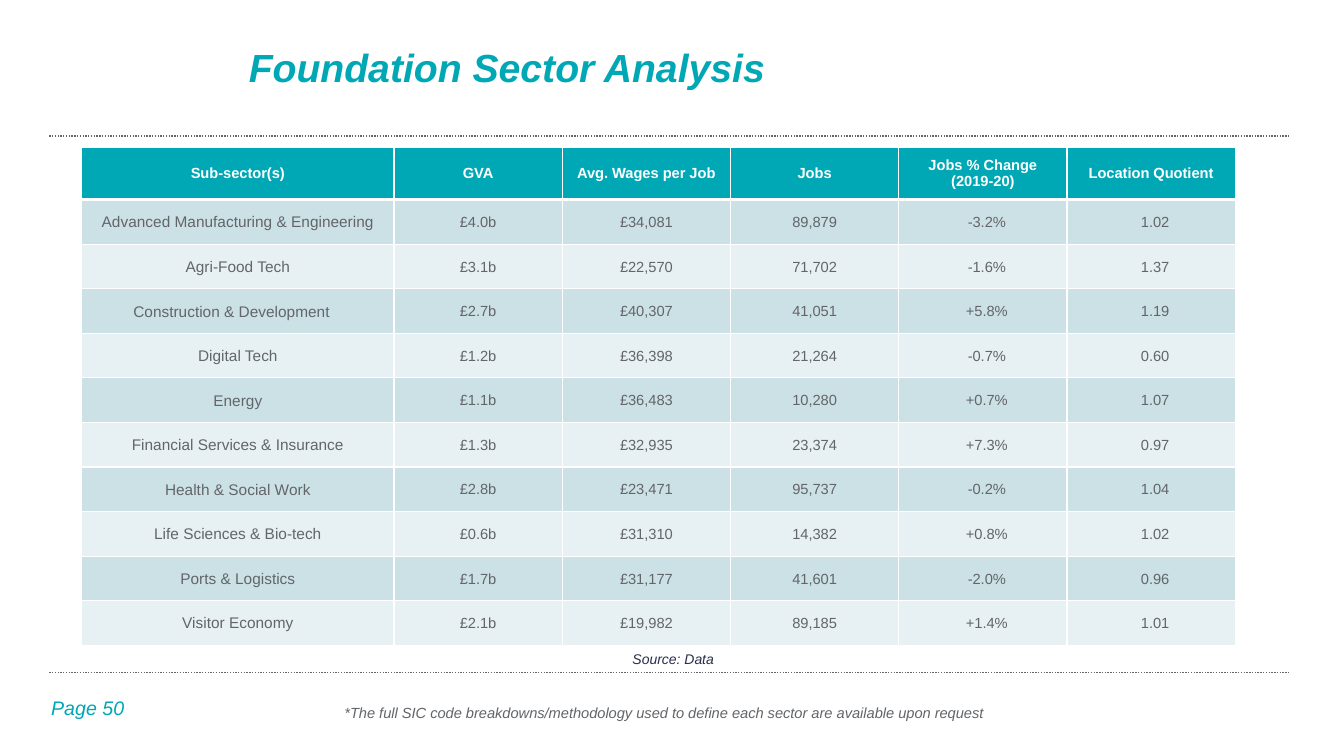
from dataclasses import dataclass

from lxml.etree import SubElement
from pptx import Presentation
from pptx.dml.color import RGBColor
from pptx.enum.dml import MSO_LINE
from pptx.enum.shapes import MSO_CONNECTOR
from pptx.enum.text import MSO_ANCHOR, PP_ALIGN
from pptx.oxml.ns import qn
from pptx.util import Cm, Pt

TITLE = "Foundation Sector Analysis"
SOURCE = "Source: Data"
NOTE = ("*The full SIC code breakdowns/methodology used to define each sector "
        "are available upon request")
PAGE = "Page 50"
HEAD = ["Sub-sector(s)", "GVA", "Avg. Wages per Job", "Jobs",
        "Jobs % Change\n(2019-20)", "Location Quotient"]
ROWS = [
    ("Advanced Manufacturing & Engineering", "£4.0b", "£34,081", "89,879", "-3.2%", "1.02"),
    ("Agri-Food Tech", "£3.1b", "£22,570", "71,702", "-1.6%", "1.37"),
    ("Construction & Development", "£2.7b", "£40,307", "41,051", "+5.8%", "1.19"),
    ("Digital Tech", "£1.2b", "£36,398", "21,264", "-0.7%", "0.60"),
    ("Energy", "£1.1b", "£36,483", "10,280", "+0.7%", "1.07"),
    ("Financial Services & Insurance", "£1.3b", "£32,935", "23,374", "+7.3%", "0.97"),
    ("Health & Social Work", "£2.8b", "£23,471", "95,737", "-0.2%", "1.04"),
    ("Life Sciences & Bio-tech", "£0.6b", "£31,310", "14,382", "+0.8%", "1.02"),
    ("Ports & Logistics", "£1.7b", "£31,177", "41,601", "-2.0%", "0.96"),
    ("Visitor Economy", "£2.1b", "£19,982", "89,185", "+1.4%", "1.01"),
]
INDENTED = "Construction & Development"  # the one left-aligned name


@dataclass(frozen=True)
class Theme:
    font: str = "Arial"
    teal: str = "00A7B5"
    grey: str = "626569"
    navy: str = "2B2E4B"
    white: str = "FFFFFF"
    bands: tuple = ("CCE1E5", "E7F1F3")
    title: float = 28
    page: float = 14
    name: float = 11
    body: float = 10.5
    source: float = 10
    thin: float = 1
    thick: float = 3


THEME = Theme()


def add_run(para, text, size, color, bold=False, italic=False):
    run = para.add_run()
    run.text = text
    font = run.font
    font.name, font.size = THEME.font, Pt(size)
    font.bold, font.italic = bold, italic
    font.color.rgb = RGBColor.from_string(color)


def add_label(slide, box, text, size, color, bold=False,
              align=PP_ALIGN.LEFT, spacing=None):
    """Add an italic text box; box is left, top, width, height in cm."""
    frame = slide.shapes.add_textbox(*map(Cm, box)).text_frame
    frame.word_wrap = True
    para = frame.paragraphs[0]
    para.alignment = align
    if spacing:
        para.line_spacing = spacing
    add_run(para, text, size, color, bold, italic=True)


def add_rule(slide, y):
    """Add a dotted line across the slide."""
    line = slide.shapes.add_connector(
        MSO_CONNECTOR.STRAIGHT, Cm(1.24), Cm(y), Cm(32.51), Cm(y))
    line.line.color.rgb = RGBColor.from_string(THEME.grey)
    line.line.width = Pt(THEME.thin)
    line.line.dash_style = MSO_LINE.ROUND_DOT
    SubElement(line._element.spPr, qn("a:effectLst"))


def set_edges(cell, row):
    """Draw white borders, thick between the head and the body."""
    props = cell._tc.get_or_add_tcPr()
    for side in "LRTB":
        heavy = (row, side) in ((0, "B"), (1, "T"))
        width = THEME.thick if heavy else THEME.thin
        edge = SubElement(props, qn(f"a:ln{side}"), w=str(Pt(width)))
        fill = SubElement(edge, qn("a:solidFill"))
        SubElement(fill, qn("a:srgbClr"), val=THEME.white)


def fill_cell(cell, row, col, text):
    head = row == 0
    set_edges(cell, row)
    cell.fill.solid()
    shade = THEME.teal if head else THEME.bands[(row - 1) % 2]
    cell.fill.fore_color.rgb = RGBColor.from_string(shade)
    cell.vertical_anchor = MSO_ANCHOR.MIDDLE
    cell.margin_left = cell.margin_right = Cm(0.2 if head else 0.03)
    cell.margin_top = Cm(0.1 if head else 0.03)
    cell.margin_bottom = Cm(0.1 if head else 0)

    left = text == INDENTED
    indent = 1.27 if left else 0.2 if col > 3 and not head else 0
    size = THEME.body if head or col else THEME.name
    color = THEME.white if head else THEME.grey
    frame = cell.text_frame
    for i, part in enumerate(text.split("\n")):
        para = frame.add_paragraph() if i else frame.paragraphs[0]
        para.alignment = PP_ALIGN.LEFT if left else PP_ALIGN.CENTER
        if indent:
            para._p.get_or_add_pPr().set("marL", str(Cm(indent)))
        add_run(para, part, size, color, bold=head)


def add_grid(slide):
    data = [HEAD, *ROWS]
    widths = [7.87] + [4.24] * (len(HEAD) - 1)
    height, top_row = 12.55, 1.32
    table = slide.shapes.add_table(
        len(data), len(HEAD), Cm(2.06), Cm(3.71), Cm(sum(widths)), Cm(height)).table
    table.horz_banding = False
    for col, width in zip(table.columns, widths):
        col.width = Cm(width)
    for r, texts in enumerate(data):
        table.rows[r].height = Cm((height - top_row) / len(ROWS) if r else top_row)
        for c, text in enumerate(texts):
            fill_cell(table.cell(r, c), r, c, text)


def main():
    deck = Presentation()
    deck.slide_width, deck.slide_height = Cm(33.87), Cm(19.05)
    slide = deck.slides.add_slide(deck.slide_layouts[6])
    for y in (16.94, 3.43):
        add_rule(slide, y)
    add_label(slide, (1.04, 17.42, 7.62, 1.02), PAGE, THEME.page, THEME.teal)
    add_grid(slide)
    add_label(slide, (6.02, 1.09, 27.18, 1.88), TITLE, THEME.title, THEME.teal,
              bold=True, spacing=0.9)
    add_label(slide, (6.02, 16.26, 12.22, 0.71), SOURCE, THEME.source, THEME.navy,
              align=PP_ALIGN.RIGHT)
    add_label(slide, (8.43, 17.6, 17.02, 0.71), NOTE, THEME.body, THEME.grey)
    deck.save("out.pptx")


if __name__ == "__main__":
    main()
